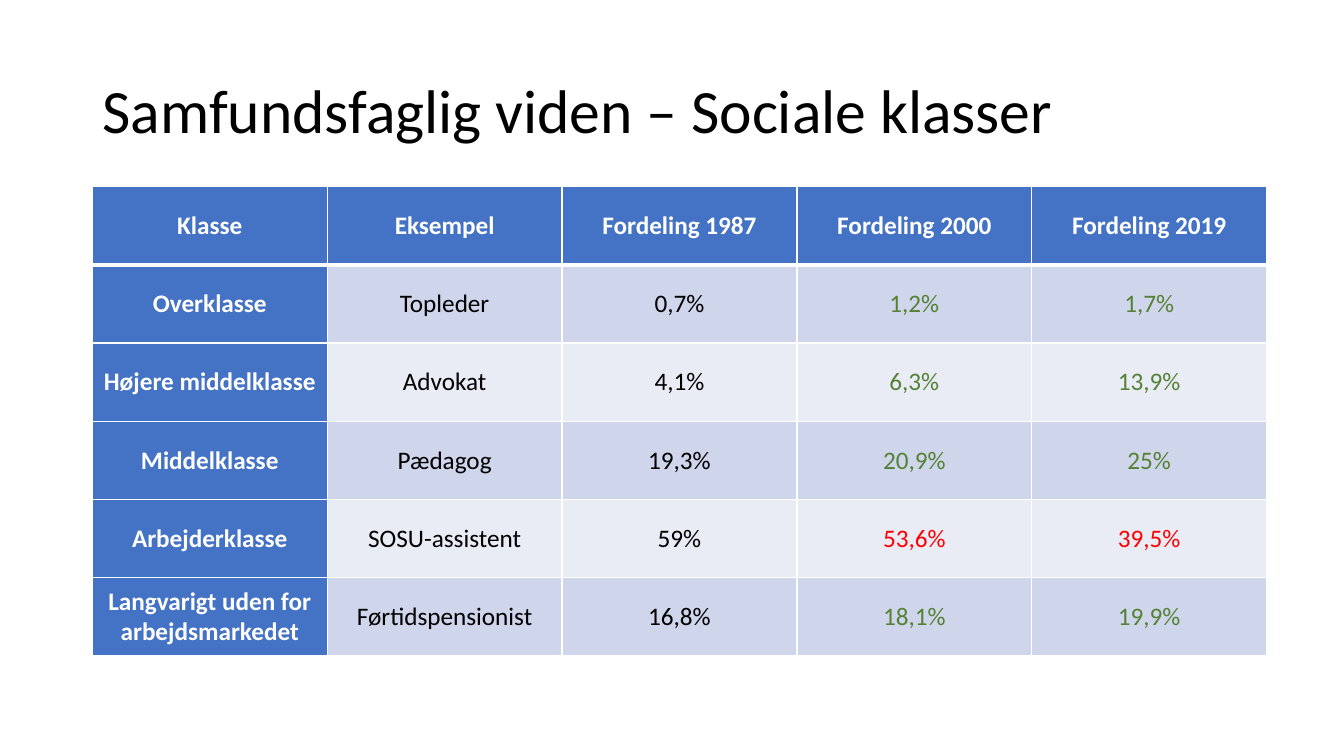
"""Build a slide with a table of social classes in 1987, 2000 and 2019."""
from lxml.etree import SubElement
from pptx import Presentation
from pptx.dml.color import RGBColor
from pptx.enum.text import MSO_ANCHOR as Anchor, MSO_AUTO_SIZE as AutoSize, PP_ALIGN as Align
from pptx.oxml.ns import qn
from pptx.util import Pt

TITLE = "Samfundsfaglig viden – Sociale klasser"
HEADER = ("Klasse", "Eksempel", "Fordeling 1987", "Fordeling 2000", "Fordeling 2019")
CLASSES = [
    ("Overklasse", "Topleder", "0,7%", "1,2%", "1,7%"),
    ("Højere middelklasse", "Advokat", "4,1%", "6,3%", "13,9%"),
    ("Middelklasse", "Pædagog", "19,3%", "20,9%", "25%"),
    ("Arbejderklasse", "SOSU-assistent", "59%", "53,6%", "39,5%"),
    ("Langvarigt uden for arbejdsmarkedet", "Førtidspensionist", "16,8%", "18,1%", "19,9%"),
]
BLACK, WHITE, BLUE = "000000", "FFFFFF", "4472C4"
GROWTH, DECLINE = "548235", "FF0000"
BANDS = ("E9EBF5", "CFD5EA")
FIRST_YEAR = 2
LEFT, TABLE_TOP, COLUMN_WIDTH, ROW_HEIGHT = 66, 133.2, 167.76, 55.92
TITLE_FONT = {"name": "Calibri", "size": Pt(44), "bold": False}
CELL_FONT = {"name": "Calibri", "size": Pt(18)}


def paint(target, colour):
    target.rgb = RGBColor.from_string(colour)


def style(para, formats, colour):
    for name, value in formats.items():
        setattr(para.font, name, value)
    paint(para.font.color, colour)


def percent(text):
    return float(text.rstrip("%").replace(",", "."))


def text_colour(values, column):
    if column <= FIRST_YEAR:
        return BLACK
    grown = percent(values[column]) > percent(values[FIRST_YEAR])
    return GROWTH if grown else DECLINE


def add_borders(cell, widths):
    properties = cell._tc.get_or_add_tcPr()
    for side, width in zip(("lnL", "lnR", "lnT", "lnB"), widths):
        line = SubElement(properties, qn(f"a:{side}"), w=str(Pt(width)))
        fill = SubElement(line, qn("a:solidFill"))
        SubElement(fill, qn("a:srgbClr"), val=WHITE)


def fill_cell(cell, values, row, column):
    heading = row == 0 or column == 0
    add_borders(cell, (1, 1, 3 if row == 1 else 1, 3 if row == 0 else 1))
    cell.fill.solid()
    paint(cell.fill.fore_color, BLUE if heading else BANDS[row % 2])
    cell.vertical_anchor = Anchor.MIDDLE
    cell.text = values[column]
    para = cell.text_frame.paragraphs[0]
    para.alignment = Align.CENTER
    colour = WHITE if heading else text_colour(values, column)
    style(para, {**CELL_FONT, "bold": heading}, colour)


def add_title(page):
    title = page.shapes.title
    title.left, title.top, title.width, title.height = map(Pt, (LEFT, 28.8, 828, 104.4))
    frame = title.text_frame
    frame.text = TITLE
    frame.auto_size = AutoSize.NONE
    frame.vertical_anchor = Anchor.MIDDLE
    para = frame.paragraphs[0]
    para.alignment, para.line_spacing = Align.LEFT, 0.9
    style(para, TITLE_FONT, BLACK)


def add_class_table(page):
    rows = [HEADER, *CLASSES]
    size = COLUMN_WIDTH * len(HEADER), ROW_HEIGHT * len(rows)
    place = map(Pt, (LEFT, TABLE_TOP, *size))
    table = page.shapes.add_table(len(rows), len(HEADER), *place).table
    table.first_col = True
    for row, values in enumerate(rows):
        for column in range(len(HEADER)):
            fill_cell(table.cell(row, column), values, row, column)


def main():
    deck = Presentation()
    deck.slide_width, deck.slide_height = Pt(960), Pt(540)
    page = deck.slides.add_slide(deck.slide_layouts[5])
    add_title(page)
    add_class_table(page)
    deck.save("out.pptx")


if __name__ == "__main__":
    main()
